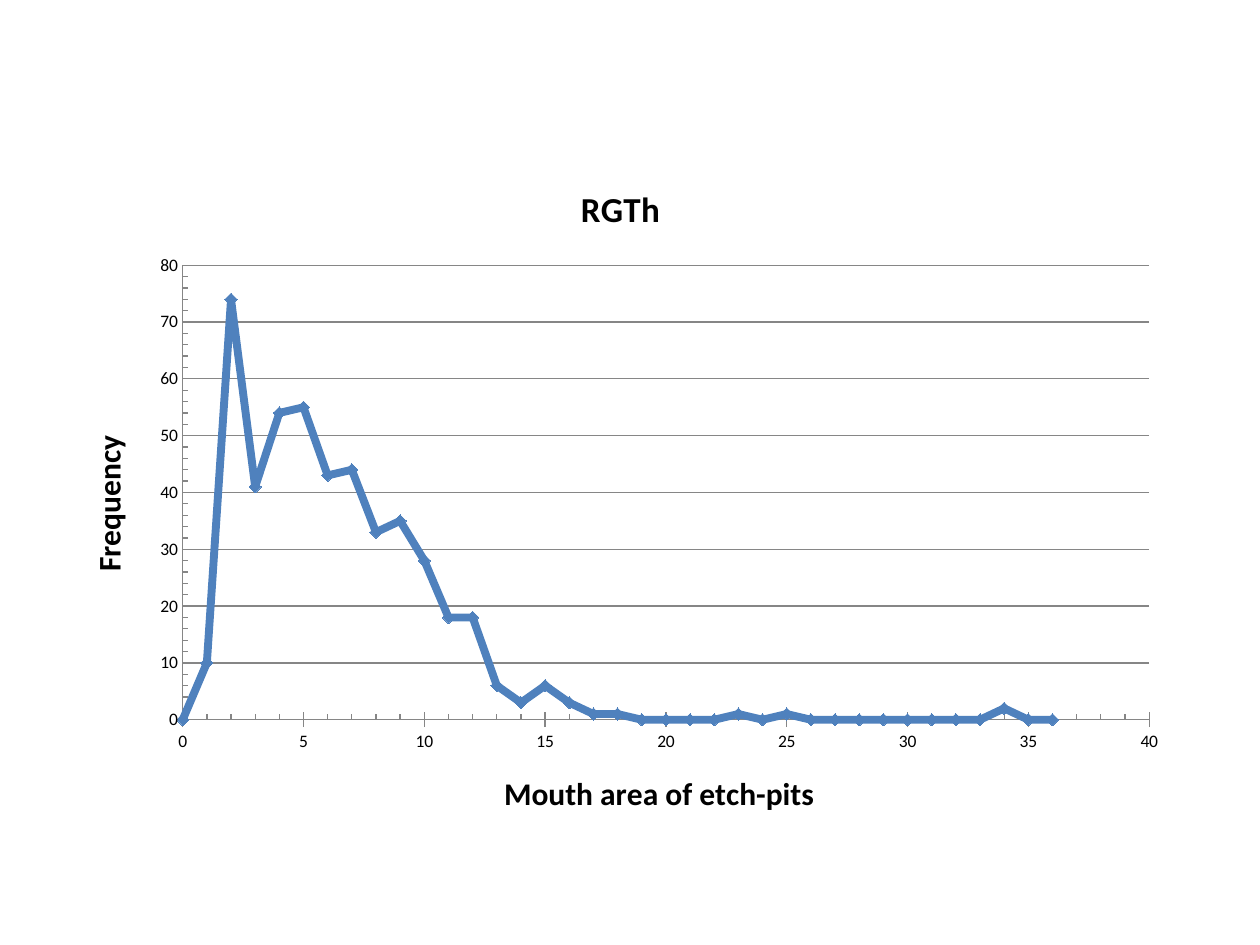
from lxml.etree import SubElement
from pptx import Presentation
from pptx.chart.data import XyChartData
from pptx.dml.color import RGBColor
from pptx.enum.chart import XL_CHART_TYPE as Chart, XL_MARKER_STYLE as Marker, XL_TICK_MARK as Tick
from pptx.oxml.ns import qn
from pptx.util import Inches, Pt

FONT, BLACK, GREY, BLUE = "Calibri", "000000", "868686", "4F81BD"
TITLE = "RGTh"
FREQUENCIES = [0, 10, 74, 41, 54, 55, 43, 44, 33, 35, 28, 18, 18, 6, 3, 6, 3, 1, 1,
               0, 0, 0, 0, 1, 0, 1, 0, 0, 0, 0, 0, 0, 0, 0, 2, 0, 0]
AXES = {
    "category_axis": dict(title="Mouth area of etch-pits", top=40, major=5, minor=1,
                          tick=Tick.CROSS, grid=False),
    "value_axis": dict(title="Frequency", top=80, major=10, minor=2,
                       tick=Tick.NONE, grid=True),
}
FRAME = (0.47, 1.25, 8.91, 5.45)
PLOT = dict(x=0.11, y=0.157, w=0.861, h=0.662)


def rgb(value):
    """Turn a hex string into a colour."""
    return RGBColor.from_string(value)


def style_font(font, size, bold=False):
    """Apply the chart's typeface at the given size."""
    font.name, font.size, font.bold = FONT, Pt(size), bold
    font.color.rgb = rgb(BLACK)


def style_line(line, color, width):
    """Set the colour and width of a line."""
    line.color.rgb = rgb(color)
    line.width = Pt(width)


def add_title(owner, text, size):
    """Give a chart or an axis a bold title."""
    r = owner.text_frame.paragraphs[0].add_run()
    r.text = text
    style_font(r.font, size, True)


def style_axis(axis, title, top, major, minor, tick, grid):
    """Set the scale, ticks, gridlines and title of an axis."""
    axis.minimum_scale, axis.maximum_scale = 0, top
    axis.major_unit = major
    axis.major_tick_mark, axis.minor_tick_mark = tick, Tick.INSIDE
    axis.has_major_gridlines = grid
    if grid:
        style_line(axis.major_gridlines.format.line, GREY, 0.75)
    style_line(axis.format.line, GREY, 0.75)
    style_font(axis.tick_labels.font, 10)
    axis.tick_labels.number_format = "General"
    axis.tick_labels.number_format_is_linked = False
    add_title(axis.axis_title, title, 18)
    unit = axis._element.find(qn("c:majorUnit"))
    minor_unit = unit.makeelement(qn("c:minorUnit"), {"val": str(minor)})
    unit.addnext(minor_unit)


def place_plot(chart):
    """Fix the inner plot area as shares of the chart."""
    area = chart._chartSpace.chart.plotArea
    layout = area.find(qn("c:layout"))
    if layout is None:
        layout = area.makeelement(qn("c:layout"), {})
        area.insert(0, layout)
    manual = SubElement(layout, qn("c:manualLayout"))
    settings = [("layoutTarget", "inner"), ("xMode", "edge"), ("yMode", "edge")]
    for tag, value in settings + list(PLOT.items()):
        SubElement(manual, qn(f"c:{tag}"), {"val": str(value)})


def main():
    """Build the slide with its frequency chart."""
    prs = Presentation()
    prs.slide_width, prs.slide_height = Inches(10), Inches(7.5)
    s = prs.slides.add_slide(prs.slide_layouts[6])

    data = XyChartData()
    points = data.add_series("Series 1")
    for area, frequency in enumerate(FREQUENCIES):
        points.add_data_point(area, frequency)
    chart = s.shapes.add_chart(Chart.XY_SCATTER_LINES, *map(Inches, FRAME), data).chart

    style_font(chart.font, 10)
    chart.has_legend = False
    chart.has_title = True
    add_title(chart.chart_title, TITLE, 20)
    chart.chart_title.include_in_layout = False
    chart.plots[0].vary_by_categories = False
    for name, settings in AXES.items():
        style_axis(getattr(chart, name), **settings)
    place_plot(chart)

    series = chart.plots[0].series[0]
    series.smooth = False
    style_line(series.format.line, BLUE, 4.5)
    series.marker.style, series.marker.size = Marker.DIAMOND, 7
    series.marker.format.fill.solid()
    series.marker.format.fill.fore_color.rgb = rgb(BLUE)
    style_line(series.marker.format.line, BLUE, 0.75)

    prs.save("out.pptx")


if __name__ == "__main__":
    main()
